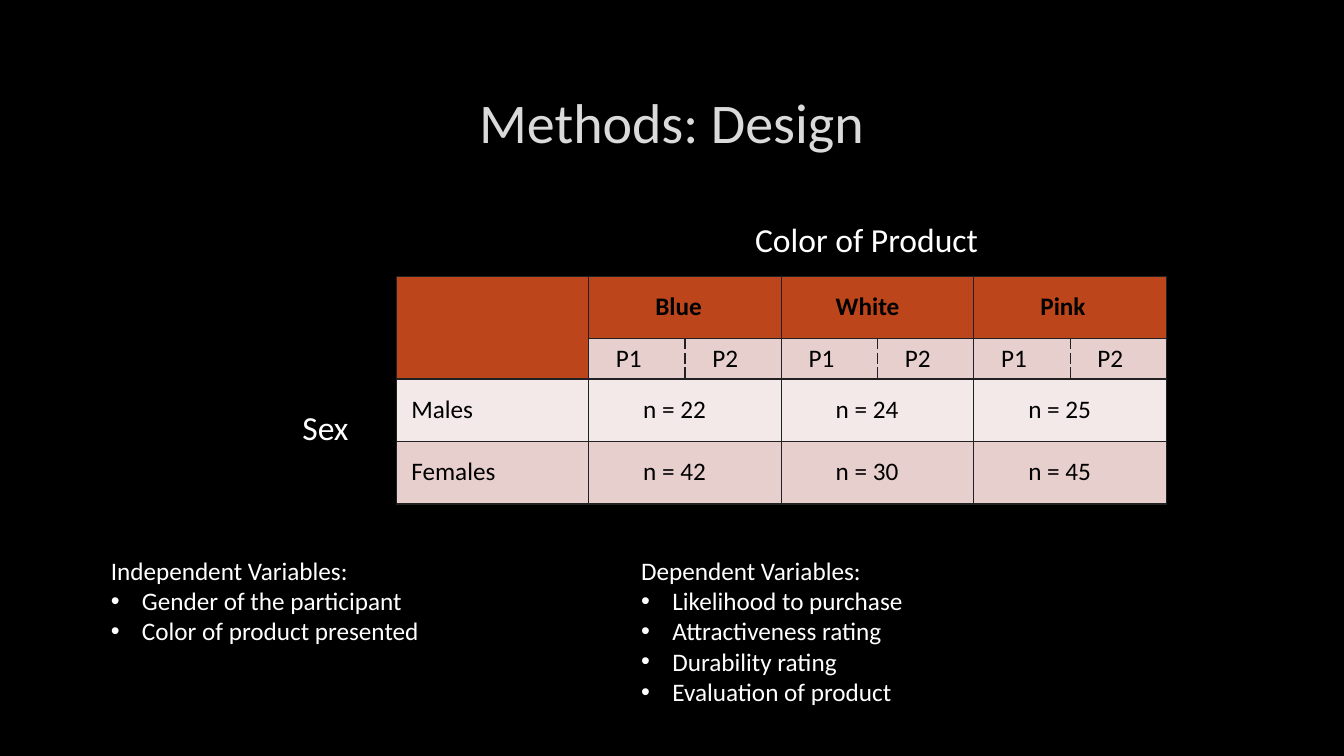
from lxml.etree import SubElement
from pptx import Presentation
from pptx.dml.color import RGBColor
from pptx.enum.text import MSO_ANCHOR, PP_ALIGN
from pptx.oxml.ns import qn
from pptx.util import Inches, Pt

FONT = "Calibri"
WHITE, BLACK, TITLE_GREY = "FFFFFF", "000000", "DADADA"
RUST, BLUSH, PALE, BORDER = "BC451B", "E7CFCD", "F3E9E8", "212123"
INDENT = 0.31


def color(hex_text):
    """Turn a hex string into a colour."""
    return RGBColor.from_string(hex_text)


def paint(fill, hex_text):
    """Make a fill solid in one colour."""
    fill.solid()
    fill.fore_color.rgb = color(hex_text)


def write(para, text, size=18, ink=WHITE, bold=False, align=PP_ALIGN.LEFT):
    """Add formatted text to a paragraph."""
    para.alignment = align
    span = para.add_run()
    span.text = text
    span.font.name, span.font.size, span.font.bold = FONT, Pt(size), bold
    span.font.color.rgb = color(ink)


def add_bullet(para):
    """Give a paragraph a hanging bullet."""
    properties = para._p.get_or_add_pPr()
    properties.set("marL", str(Inches(INDENT)))
    properties.set("indent", str(-Inches(INDENT)))
    SubElement(properties, qn("a:buFont"), typeface="Arial")
    SubElement(properties, qn("a:buChar"), char="•")


def add_text(page, box, text, bullets=(), wrap=False, anchor=MSO_ANCHOR.TOP, **style):
    """Place a line of text, with optional bullets below it, in a box."""
    frame = page.shapes.add_textbox(*map(Inches, box)).text_frame
    frame.word_wrap, frame.vertical_anchor = wrap, anchor
    write(frame.paragraphs[0], text, **style)
    for bullet in bullets:
        para = frame.add_paragraph()
        write(para, bullet, **style)
        add_bullet(para)


def add_borders(cell, dashed_side=None):
    """Draw the four borders of a cell, one of them dashed if named."""
    properties = cell._tc.get_or_add_tcPr()
    for side in "LRTB":
        line = SubElement(properties, qn(f"a:ln{side}"), w=str(Pt(1)))
        fill = SubElement(line, qn("a:solidFill"))
        SubElement(fill, qn("a:srgbClr"), val=BORDER)
        SubElement(line, qn("a:prstDash"), val="dash" if side == dashed_side else "solid")


def fill_cell(cell, text, left, edge=0.15, **style):
    """Write text in a cell, starting at a left inset."""
    cell.margin_left = Inches(left)
    cell.margin_right = cell.margin_top = cell.margin_bottom = Inches(edge)
    write(cell.text_frame.paragraphs[0], text, ink=BLACK, **style)


def add_design_table(page, box):
    """Build the table of sex by product colour."""
    width, height = box[2:]
    products = [("Blue", 0.66), ("White", 0.54), ("Pink", 0.66)]
    counts = [("Males", 22, 24, 25), ("Females", 42, 30, 45)]
    fills = [RUST, BLUSH, PALE, BLUSH]
    table = page.shapes.add_table(4, 7, *map(Inches, box)).table
    for index, column in enumerate(table.columns):
        column.width = Inches(width / 8 * (1 if index else 2))
    for index, row in enumerate(table.rows):
        row.height = Inches(0.4 if index == 1 else (height - 0.4) / 3)
        for place, cell in enumerate(row.cells):
            dashed_side = "LR"[place % 2] if index == 1 and place else None
            add_borders(cell, dashed_side)
            paint(cell.fill, fills[index] if place else fills[index if index > 1 else 0])
    table.cell(0, 0).merge(table.cell(1, 0))
    for index, (product, inset) in enumerate(products):
        first = 1 + 2 * index
        for row in (0, 2, 3):
            table.cell(row, first).merge(table.cell(row, first + 1))
        fill_cell(table.cell(0, first), product, inset, bold=True)
        for half in range(2):
            fill_cell(table.cell(1, first + half), f"P{half + 1}", 0.27, edge=0.05)
    for row, (sex, *numbers) in enumerate(counts, start=2):
        fill_cell(table.cell(row, 0), sex, 0.15)
        for index, number in enumerate(numbers):
            fill_cell(table.cell(row, 1 + 2 * index), f"n = {number}", 0.54)


def add_design_slide(deck):
    """Add the slide on the design of the study."""
    page = deck.slides.add_slide(deck.slide_layouts[6])
    paint(page.background.fill, BLACK)
    add_text(page, (1, 0.67, 11.32, 1.06), "Methods: Design", wrap=True,
             anchor=MSO_ANCHOR.MIDDLE, size=40, ink=TITLE_GREY, align=PP_ALIGN.CENTER)
    add_design_table(page, (3.93, 2.74, 7.64, 2.26))
    add_text(page, (7.39, 2.12, 2.64, 0.5), "Color of Product", size=24)
    add_text(page, (2.9, 3.99, 0.71, 0.5), "Sex", size=24)
    add_text(page, (1, 5.46, 3.41, 1.01), "Independent Variables:",
             ["Gender of the participant", "Color of product presented"])
    add_text(page, (6.26, 5.46, 2.98, 1.62), "Dependent Variables:",
             ["Likelihood to purchase", "Attractiveness rating",
              "Durability rating", "Evaluation of product"])


def main():
    """Build and save the deck."""
    deck = Presentation()
    deck.slide_width, deck.slide_height = Inches(13.33), Inches(7.5)
    add_design_slide(deck)
    deck.save("out.pptx")


if __name__ == "__main__":
    main()
